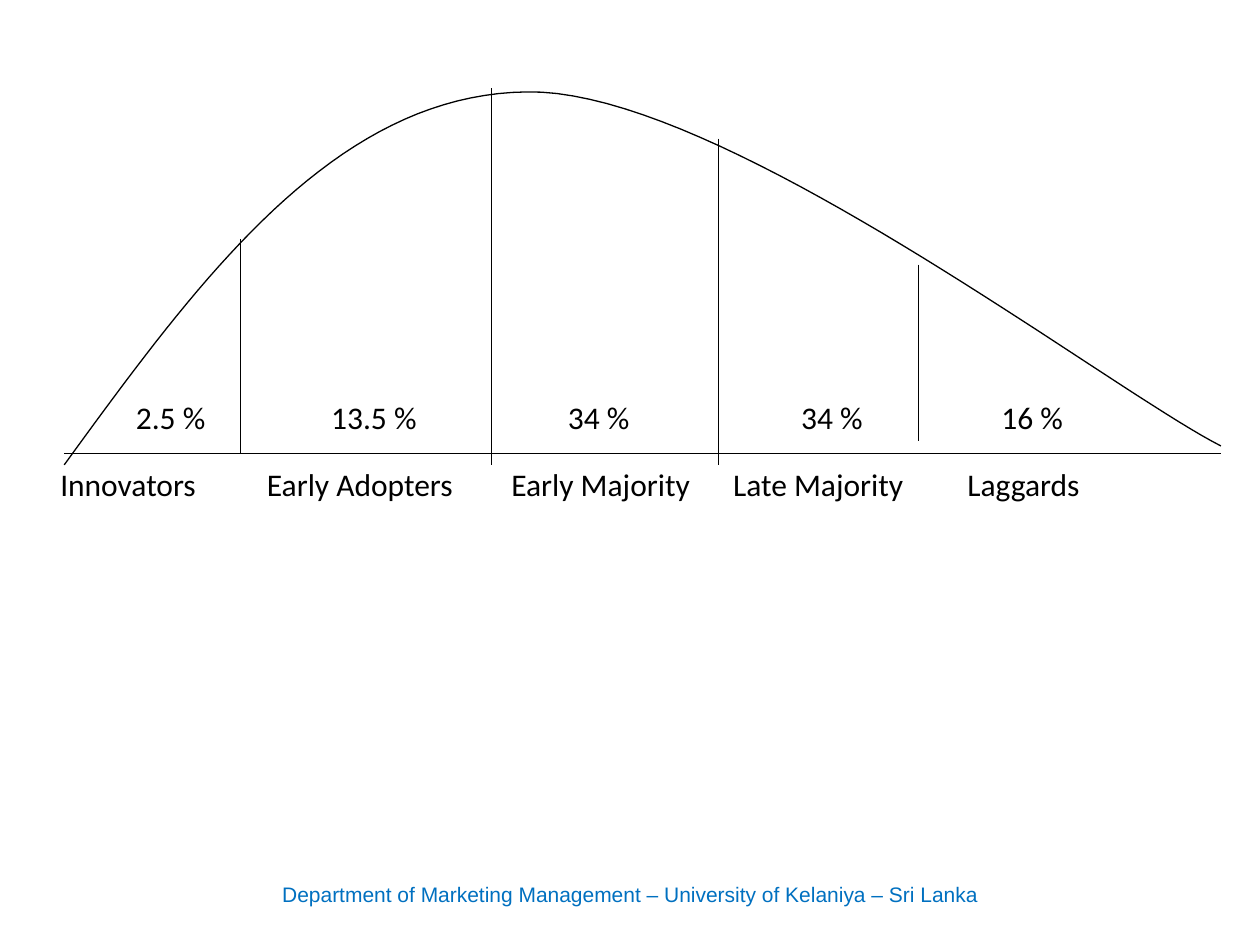
from dataclasses import dataclass

from lxml import etree
from pptx import Presentation
from pptx import util as u
from pptx.dml.color import RGBColor
from pptx.enum import shapes, text
from pptx.oxml.ns import qn


@dataclass(frozen=True)
class Theme:
    ink: str = "000000"
    accent: str = "0070C0"
    label_font: str = "Calibri"
    footer_font: str = "Arial"
    label_size: float = 18
    footer_size: float = 12
    line_width: float = 0.75


class SlideBuilder:
    def __init__(self, slide, theme):
        self.s = slide
        self.theme = theme

    def apply(self, target, values):
        for name, value in values.items():
            setattr(target, name, value)

    def outline(self, sp):
        sp.line.color.rgb = RGBColor.from_string(self.theme.ink)
        sp.line.width = u.Pt(self.theme.line_width)

    def line(self, x1, y1, x2, y2):
        cxn = self.s.shapes.add_connector(
            shapes.MSO_CONNECTOR.STRAIGHT, *map(u.Inches, (x1, y1, x2, y2)))
        self.outline(cxn)
        etree.SubElement(cxn.line._get_or_add_ln().getparent(), qn("a:effectLst"))

    def curve(self, segments, steps=40):
        points = [segments[0][0]]
        for segment in segments:
            for i in range(1, steps + 1):
                t = i / steps
                weights = ((1 - t) ** 3, 3 * t * (1 - t) ** 2, 3 * t * t * (1 - t), t ** 3)
                points.append(tuple(
                    sum(w * p[axis] for w, p in zip(weights, segment)) for axis in (0, 1)))
        emu = [(u.Inches(x), u.Inches(y)) for x, y in points]
        builder = self.s.shapes.build_freeform(*emu[0])
        builder.add_line_segments(emu[1:], close=False)
        sp = builder.convert_to_shape()
        sp.fill.background()
        sp.shadow.inherit = False
        self.outline(sp)

    def text(self, words, x, y, w, h, font, size, color, frame, align):
        sp = self.s.shapes.add_textbox(*map(u.Inches, (x, y, w, h)))
        tf = sp.text_frame
        self.apply(tf, frame)
        p = tf.paragraphs[0]
        p.alignment = align
        r = p.add_run()
        r.text = words
        self.apply(r.font, {"name": font, "size": u.Pt(size)})
        r.font.color.rgb = RGBColor.from_string(color)

    def label(self, words, x, y, w):
        t = self.theme
        frame = {"word_wrap": False, "auto_size": text.MSO_AUTO_SIZE.SHAPE_TO_FIT_TEXT}
        self.text(words, x, y, w, 0.4, t.label_font, t.label_size, t.ink,
                  frame, text.PP_ALIGN.LEFT)

    def footer(self, words):
        t = self.theme
        frame = {"word_wrap": True, "vertical_anchor": text.MSO_ANCHOR.MIDDLE}
        self.text(words, 1.74, 6.9, 6.53, 0.4, t.footer_font, t.footer_size, t.accent,
                  frame, text.PP_ALIGN.CENTER)


ADOPTION_CURVE = [
    [(0.51, 3.69), (1.58, 2.22), (2.65, 0.75), (4.18, 0.73)],
    [(4.18, 0.73), (5.71, 0.7), (8.77, 3.07), (9.69, 3.54)],
]
BASELINE = 3.6
DIVIDERS = [(1.91, 1.9, BASELINE), (3.9, 0.7, 3.69), (5.7, 1.1, 3.69), (7.29, 2.1, 3.5)]
NAME_TOP, SHARE_TOP = 3.64, 3.11
CATEGORIES = [
    (("Innovators", 0.38, 1.29), ("2.5 %", 0.98, 0.76)),
    (("Early Adopters", 2.02, 1.76), ("13.5 %", 2.53, 0.89)),
    (("Early Majority", 3.96, 1.7), ("34 %", 4.41, 0.7)),
    (("Late Majority", 5.72, 1.64), ("34 %", 6.26, 0.7)),
    (("Laggards", 7.58, 1.1), ("16 %", 7.85, 0.7)),
]


def main():
    prs = Presentation()
    prs.slide_width, prs.slide_height = u.Inches(10), u.Inches(7.5)
    b = SlideBuilder(prs.slides.add_slide(prs.slide_layouts[6]), Theme())
    b.footer("Department of Marketing Management – University of Kelaniya – Sri Lanka")
    b.curve(ADOPTION_CURVE)
    b.line(0.51, BASELINE, 9.69, BASELINE)
    for x, top, bottom in DIVIDERS:
        b.line(x, top, x, bottom)
    for category in CATEGORIES:
        for (words, x, w), y in zip(category, (NAME_TOP, SHARE_TOP)):
            b.label(words, x, y, w)
    prs.save("out.pptx")


if __name__ == "__main__":
    main()
